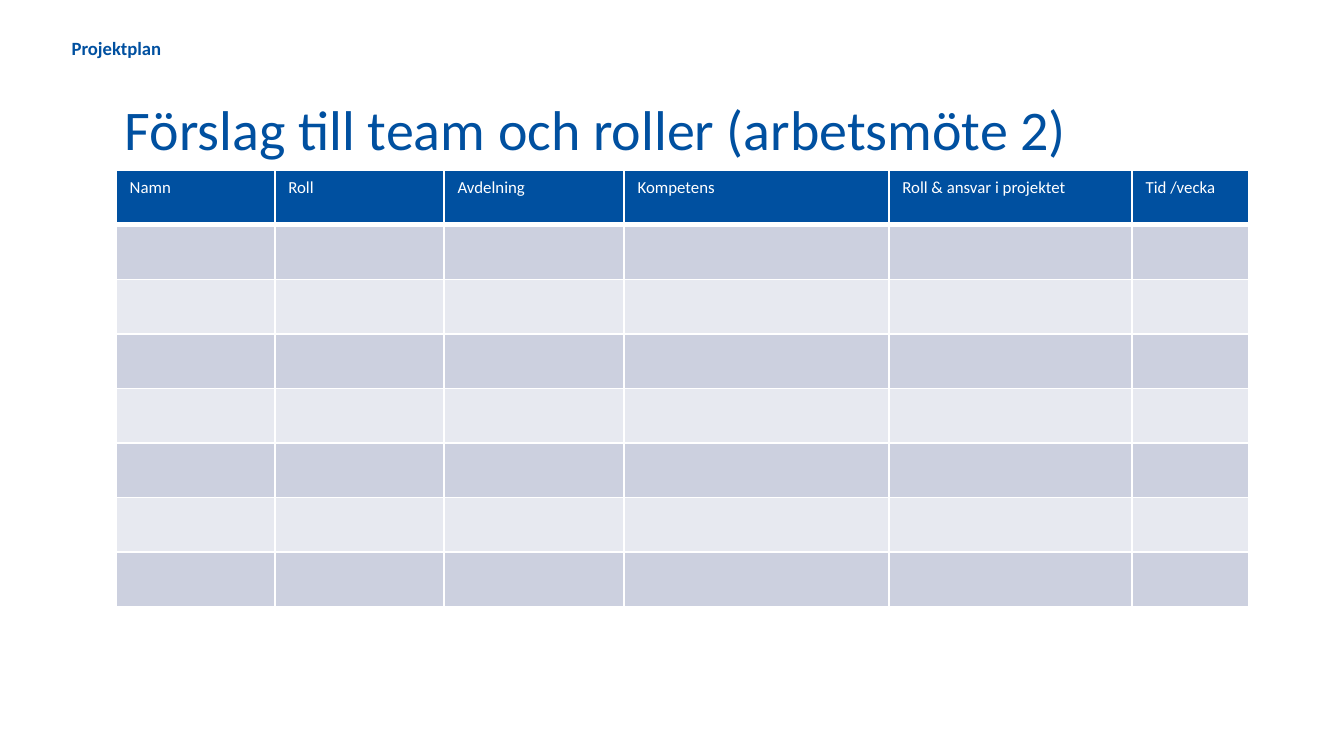
import pptx
import pptx.dml.color
import pptx.enum.text
import pptx.oxml
import pptx.oxml.ns
import pptx.util

BLUE, WHITE = "0050A0", "FFFFFF"
BANDS = ["CCD0DF", "E7E9F0"]
WIDTH = pptx.util.Inches(10)
HEIGHT = WIDTH * 9 // 16


def color(hex_code):
    return pptx.dml.color.RGBColor.from_string(hex_code)


def style(paragraph, hex_code, **formats):
    for name, value in formats.items():
        setattr(paragraph.font, name, value)
    paragraph.font.name = "Calibri"
    paragraph.font.color.rgb = color(hex_code)


deck = pptx.Presentation()
deck.slide_width, deck.slide_height = WIDTH, HEIGHT
slide = deck.slides.add_slide(deck.slide_layouts[1])

# Heading and section label: left, top, width, height in percent of the slide
headings = [
    (slide.shapes.title, "Förslag till team och roller (arbetsmöte 2)",
     (8.3, 11.2, 84.3, 11.38), {"size": pptx.util.Pt(30), "bold": False}),
    (slide.placeholders[1], "Projektplan",
     (4.33, 4.8, 88.2, 3.2), {"size": pptx.util.Pt(10), "bold": True}),
]
for holder, wording, (left, top, width, height), formats in headings:
    holder.left, holder.width = int(left * WIDTH / 100), int(width * WIDTH / 100)
    holder.top, holder.height = int(top * HEIGHT / 100), int(height * HEIGHT / 100)
    frame = holder.text_frame
    frame.text = wording
    frame.auto_size = pptx.enum.text.MSO_AUTO_SIZE.NONE
    frame.vertical_anchor = pptx.enum.text.MSO_ANCHOR.MIDDLE
    paragraph = frame.paragraphs[0]
    paragraph.alignment = pptx.enum.text.PP_ALIGN.LEFT
    paragraph.space_before = pptx.util.Pt(0)
    properties = paragraph._p.get_or_add_pPr()
    properties.set("marL", "0")
    properties.set("indent", "0")
    properties.append(pptx.oxml.parse_xml(
        f'<a:buNone {pptx.oxml.ns.nsdecls("a")}/>'))
    style(paragraph, BLUE, **formats)

# Team table: header row and seven empty rows to fill in
columns = {"Namn": 1.18, "Roll": 1.26, "Avdelning": 1.34, "Kompetens": 1.97,
           "Roll & ansvar i projektet": 1.81, "Tid /vecka": 0.87}
row_count = 8
team = slide.shapes.add_table(
    row_count, len(columns), int(0.0865 * WIDTH), int(0.2258 * HEIGHT),
    int(0.843 * WIDTH), int(0.5742 * HEIGHT)).table

for column, (label, width) in enumerate(columns.items()):
    team.columns[column].width = pptx.util.Inches(width)
    header = team.cell(0, column)
    header.text = label
    style(header.text_frame.paragraphs[0], WHITE,
          size=pptx.util.Pt(9), bold=False)
    for side, points in {"L": 1, "R": 1, "T": 1, "B": 3}.items():
        header._tc.get_or_add_tcPr().append(pptx.oxml.parse_xml(
            f'<a:ln{side} {pptx.oxml.ns.nsdecls("a")} w="{pptx.util.Pt(points)}">'
            f'<a:solidFill><a:srgbClr val="{WHITE}"/></a:solidFill></a:ln{side}>'))
    for row in range(row_count):
        cell = team.cell(row, column)
        cell.fill.solid()
        cell.fill.fore_color.rgb = color(BANDS[(row - 1) % 2] if row else BLUE)

deck.save("out.pptx")
